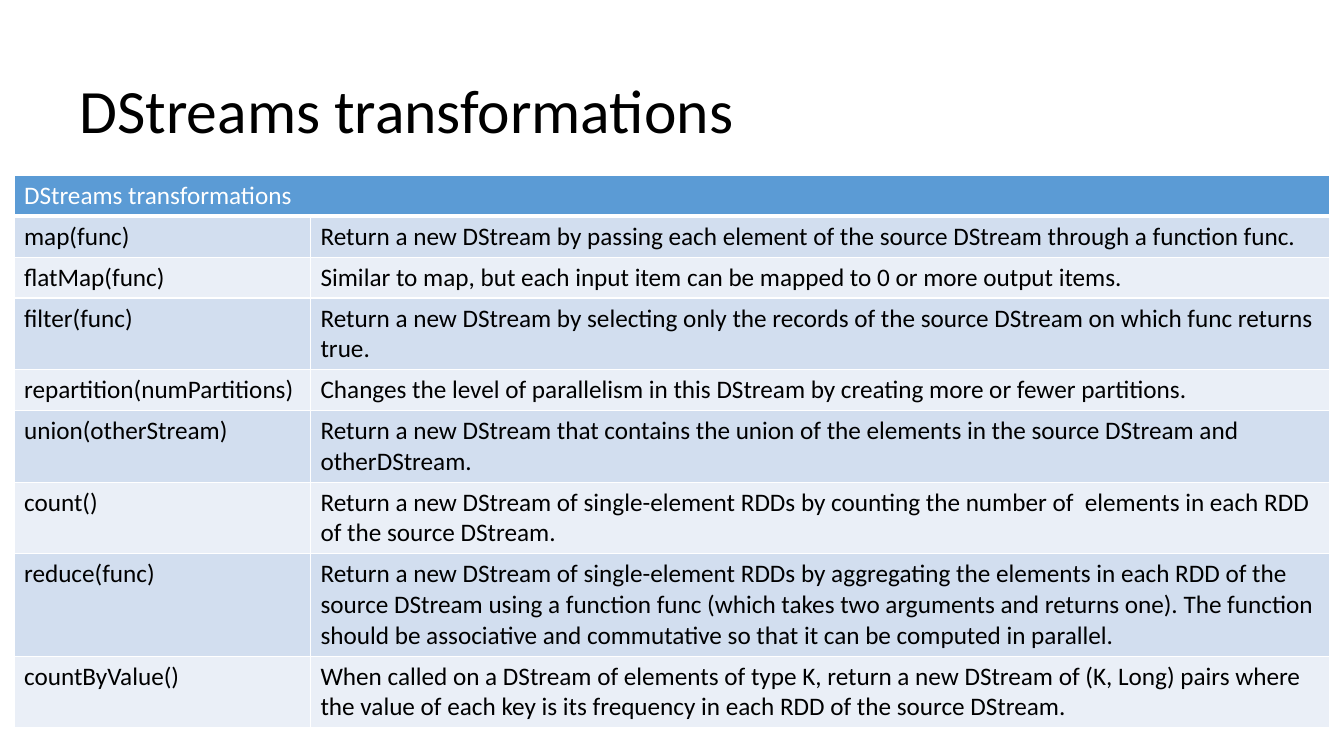
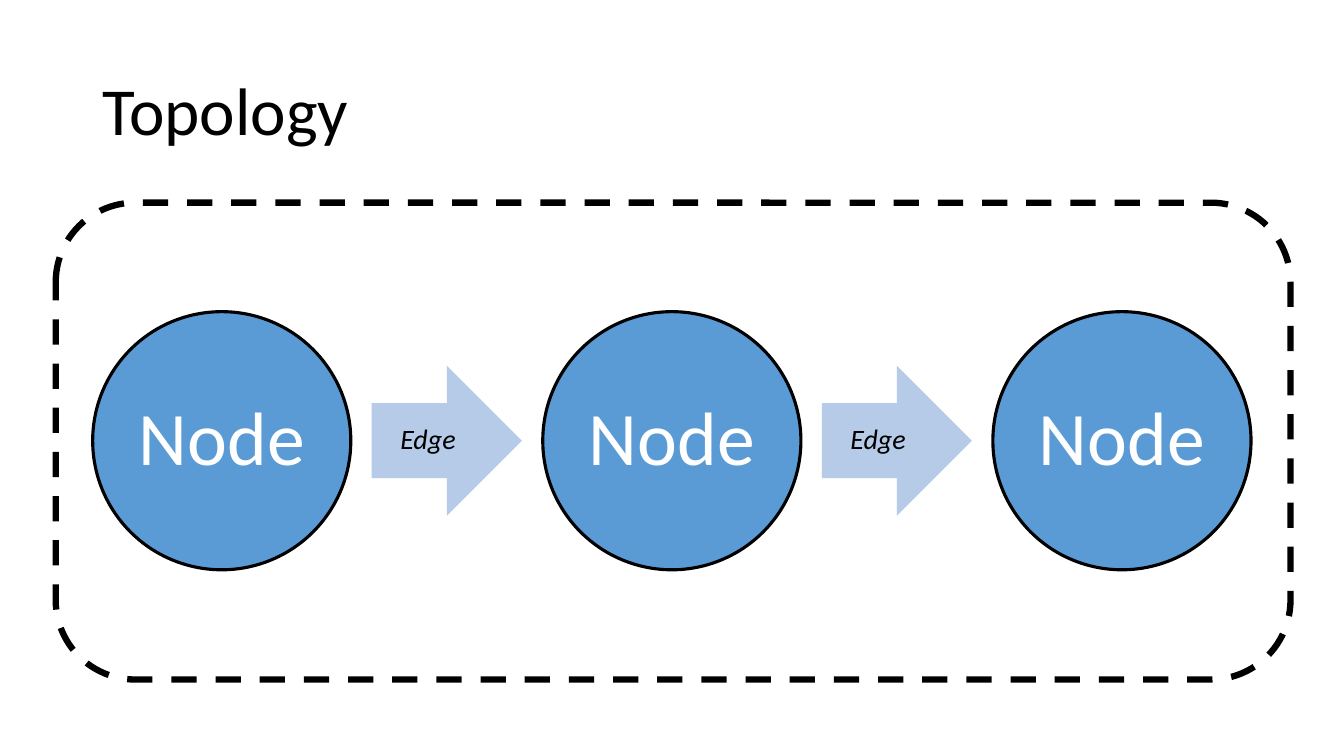
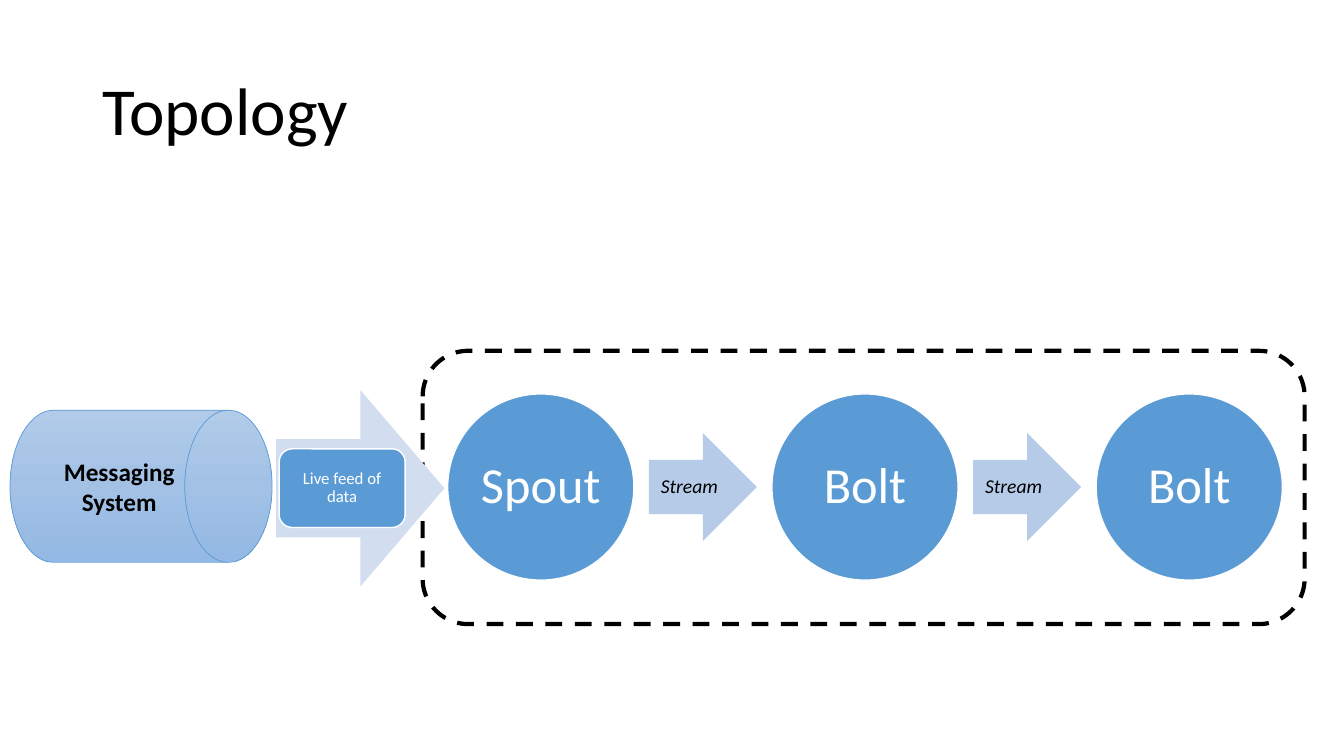
"""Build three slides on stream transformations and topologies."""
import copy
import dataclasses

import pptx
import pptx.dml.color
import pptx.enum.dml
import pptx.enum.shapes
import pptx.enum.text
import pptx.oxml
import pptx.oxml.ns
import pptx.util

Pt = pptx.util.Pt
SHAPES = pptx.enum.shapes.MSO_SHAPE
ALIGN = pptx.enum.text.PP_ALIGN
MIDDLE = pptx.enum.text.MSO_ANCHOR.MIDDLE


@dataclasses.dataclass(frozen=True)
class Theme:
    font: str = "Calibri"
    black: str = "000000"
    white: str = "FFFFFF"
    blue: str = "5B9BD5"
    arrow: str = "B5CBE7"
    band_dark: str = "D2DEEF"
    band_light: str = "EAEFF7"
    drum: tuple = ((0, "B1CBE9"), (0.5, "A3C1E5"), (1, "93B9E4"))
    body_size: float = 18
    feed_size: float = 12


THEME = Theme()

TABLE_TITLE = "DStreams transformations"
TRANSFORMATIONS = [
    ("map(func)", "Return a new DStream by passing each element of the source DStream through a function func."),
    ("flatMap(func)", "Similar to map, but each input item can be mapped to 0 or more output items."),
    ("filter(func)", "Return a new DStream by selecting only the records of the source DStream on which func "
                     "returns true."),
    ("repartition(numPartitions)", "Changes the level of parallelism in this DStream by creating more or fewer "
                                   "partitions."),
    ("union(otherStream)", "Return a new DStream that contains the union of the elements in the source DStream "
                           "and otherDStream."),
    ("count()", "Return a new DStream of single-element RDDs by counting the number of  elements in each RDD "
                "of the source DStream."),
    ("reduce(func)", "Return a new DStream of single-element RDDs by aggregating the elements in each RDD of the "
                     "source DStream using a function func (which takes two arguments and returns one). The "
                     "function should be associative and commutative so that it can be computed in parallel."),
    ("countByValue()", "When called on a DStream of elements of type K, return a new DStream of (K, Long) pairs "
                       "where the value of each key is its frequency in each RDD of the source DStream."),
]
TABLE_BOX = (10, 125.3)
COLUMN_WIDTHS = (211.8, 727.8)
ROW_HEIGHT = 29.2

NODE_CHAIN = {
    "nodes": ("Node", "Node", "Node"), "edge": "Edge",
    "frame": (39.8, 144.8, 882, 340.6), "frame_line": 4.5,
    "left": 66.2, "top": 222.6, "diameter": 184.4, "step": 321.5, "arrow": 107.2,
    "node_size": 54, "edge_size": 20, "inset": 5,
    "outline": (THEME.black, 2.25),
}
STREAM_CHAIN = {
    "nodes": ("Spout", "Bolt", "Bolt"), "edge": "Stream",
    "frame": (301.9, 250.6, 630, 195.2), "frame_line": 3,
    "left": 319.8, "top": 281.4, "diameter": 133, "step": 231.6, "arrow": 77.2,
    "node_size": 36, "edge_size": 14, "inset": 3.6,
    "outline": (THEME.white, 1),
}


def rgb(color):
    return pptx.dml.color.RGBColor.from_string(color)


def format_text(text_frame, size, color, spacing=None, align=None, bold=False, italic=False):
    for paragraph in text_frame.paragraphs:
        paragraph.alignment = align
        paragraph.line_spacing = spacing
        for run in paragraph.runs:
            run.font.name = THEME.font
            run.font.size = Pt(size)
            run.font.color.rgb = rgb(color)
            run.font.bold = bold
            run.font.italic = italic


def set_margins(text_frame, inset):
    text_frame.margin_left = text_frame.margin_right = Pt(inset)
    text_frame.margin_top = text_frame.margin_bottom = Pt(inset)


def add_shape(slide, kind, box, fill, outline=None):
    shape = slide.shapes.add_shape(kind, *map(Pt, box))
    shape.shadow.inherit = False
    shape.fill.solid()
    shape.fill.fore_color.rgb = rgb(fill)
    if outline:
        color, width = outline
        shape.line.color.rgb = rgb(color)
        shape.line.width = Pt(width)
    else:
        shape.line.fill.background()
    return shape


def add_label(shape, text, size, color, inset, italic=False):
    text_frame = shape.text_frame
    text_frame.text = text
    text_frame.word_wrap = True
    text_frame.vertical_anchor = MIDDLE
    set_margins(text_frame, inset)
    format_text(text_frame, size, color, 0.9, ALIGN.CENTER, italic=italic)


def add_title(slide, text, left=66.2, width=828, size=48):
    text_frame = slide.shapes.add_textbox(Pt(left), Pt(28.8), Pt(width), Pt(104.4)).text_frame
    text_frame.text = text
    text_frame.word_wrap = True
    text_frame.vertical_anchor = MIDDLE
    format_text(text_frame, size, THEME.black, 0.9)


def set_borders(cell, top, bottom):
    properties = cell._tc.get_or_add_tcPr()
    widths = {"lnL": 1, "lnR": 1, "lnT": top, "lnB": bottom}
    for index, (side, width) in enumerate(widths.items()):
        properties.insert(index, pptx.oxml.parse_xml(
            f'<a:{side} {pptx.oxml.ns.nsdecls("a")} w="{Pt(width)}"><a:solidFill>'
            f'<a:srgbClr val="{THEME.white}"/></a:solidFill></a:{side}>'))


def add_transformations(slide):
    rows = [(TABLE_TITLE, ""), *TRANSFORMATIONS]
    table = slide.shapes.add_table(
        len(rows), len(COLUMN_WIDTHS), *map(Pt, TABLE_BOX),
        Pt(sum(COLUMN_WIDTHS)), Pt(ROW_HEIGHT * len(rows))).table
    for column, width in zip(table.columns, COLUMN_WIDTHS):
        column.width = Pt(width)
    for row_index, texts in enumerate(rows):
        header = row_index == 0
        band = THEME.band_dark if row_index % 2 else THEME.band_light
        for column_index, text in enumerate(texts):
            cell = table.cell(row_index, column_index)
            cell.text_frame.text = text
            cell.fill.solid()
            cell.fill.fore_color.rgb = rgb(THEME.blue if header else band)
            set_borders(cell, 3 if row_index == 1 else 1, 3 if header else 1)
            format_text(cell.text_frame, THEME.body_size, THEME.white if header else THEME.black)
    table.cell(0, 0).merge(table.cell(0, 1))


def add_frame(slide, chain):
    frame = add_shape(slide, SHAPES.ROUNDED_RECTANGLE, chain["frame"], THEME.white,
                      (THEME.black, chain["frame_line"]))
    frame.line.dash_style = pptx.enum.dml.MSO_LINE.DASH


def add_chain(slide, chain):
    diameter, arrow_size = chain["diameter"], chain["arrow"]
    arrow_offset = (diameter + chain["step"] - arrow_size) / 2
    arrow_top = chain["top"] + (diameter - arrow_size) / 2
    for index, name in enumerate(chain["nodes"]):
        left = chain["left"] + index * chain["step"]
        node = add_shape(slide, SHAPES.OVAL, (left, chain["top"], diameter, diameter),
                         THEME.blue, chain["outline"])
        add_label(node, name, chain["node_size"], THEME.white, chain["inset"])
        if index < len(chain["nodes"]) - 1:
            edge = add_shape(slide, SHAPES.RIGHT_ARROW,
                             (left + arrow_offset, arrow_top, arrow_size, arrow_size), THEME.arrow)
            add_label(edge, chain["edge"], chain["edge_size"], THEME.black, 0, italic=True)


def add_messaging_system(slide):
    drum = add_shape(slide, SHAPES.FLOWCHART_DIRECT_ACCESS_STORAGE, (7.2, 293, 187.2, 108.7),
                     THEME.blue, (THEME.blue, 0.5))
    drum.fill.gradient()
    drum.fill.gradient_angle = 270
    first_stop = drum._element.spPr.find(".//" + pptx.oxml.ns.qn("a:gs"))
    first_stop.addnext(copy.deepcopy(first_stop))
    for stop, (position, color) in zip(drum.fill.gradient_stops, THEME.drum):
        stop.position = position
        stop.color.rgb = rgb(color)
    drum.text_frame.text = "Messaging\nSystem"
    drum.text_frame.word_wrap = True
    drum.text_frame.vertical_anchor = MIDDLE
    format_text(drum.text_frame, THEME.body_size, THEME.black, align=ALIGN.CENTER, bold=True)


def add_live_feed(slide):
    add_shape(slide, SHAPES.RIGHT_ARROW, (197.3, 278.6, 120.2, 140.4), THEME.band_dark)
    feed = add_shape(slide, SHAPES.ROUNDED_RECTANGLE, (199.4, 320.6, 90, 56.2),
                     THEME.blue, (THEME.white, 1))
    add_label(feed, "Live feed of data", THEME.feed_size, THEME.white, 3.6)


def main():
    presentation = pptx.Presentation()
    presentation.slide_width, presentation.slide_height = Pt(960), Pt(540)
    blank = presentation.slide_layouts[6]

    slide = presentation.slides.add_slide(blank)
    add_transformations(slide)
    add_title(slide, TABLE_TITLE, left=49.7, width=843.8, size=44)

    for chain in (NODE_CHAIN, STREAM_CHAIN):
        slide = presentation.slides.add_slide(blank)
        add_frame(slide, chain)
        add_title(slide, "Topology")
        add_chain(slide, chain)
    add_messaging_system(slide)
    add_live_feed(slide)

    presentation.save("out.pptx")


if __name__ == "__main__":
    main()
